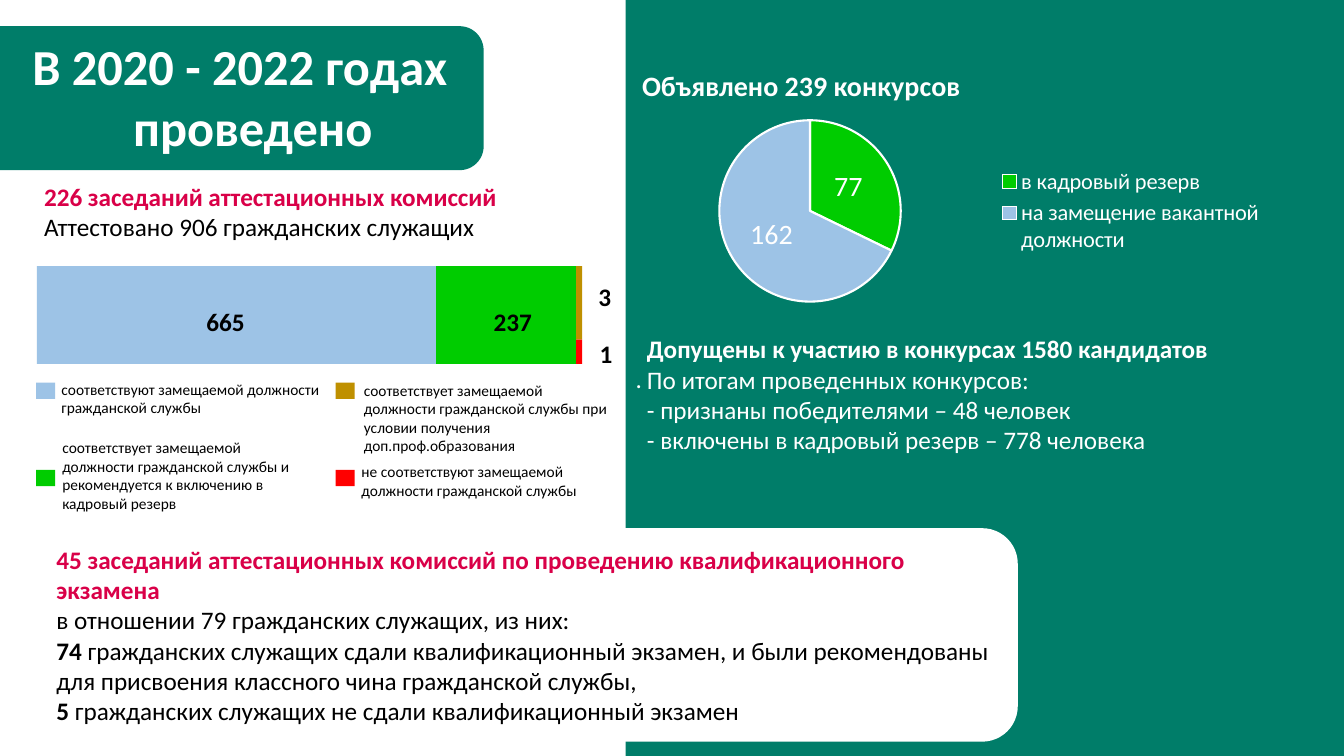
"""Build a slide on attestation and competition results for 2020–2022."""
from lxml.etree import SubElement
from pptx import Presentation
from pptx.chart.data import CategoryChartData
from pptx.dml.color import RGBColor
from pptx.enum.chart import XL_CHART_TYPE, XL_LABEL_POSITION, XL_LEGEND_POSITION
from pptx.enum.shapes import MSO_SHAPE
from pptx.enum.text import MSO_ANCHOR, MSO_AUTO_SIZE, PP_ALIGN
from pptx.oxml.ns import qn
from pptx.util import Cm, Pt

FONT = "Calibri"
COLORS = {
    "teal": "007D69", "white": "FFFFFF", "black": "000000", "crimson": "D90048",
    "green": "00CC00", "blue": "9DC3E6", "amber": "BF9000", "red": "FF0000",
}

TITLE = [[("В 2020 - 2022 годах", True, "white")], [("проведено", True, "white")]]
COMPETITIONS = [[("Объявлено 239 конкурсов", True, "white")]]
ATTESTATION = [
    [("226 заседаний аттестационных комиссий", True, "crimson")],
    [("Аттестовано 906 гражданских служащих", False, "black")],
]
CANDIDATES = [
    [("Допущены к участию в конкурсах 1580 кандидатов", True, "white")],
    [("По итогам проведенных конкурсов:", False, "white")],
    [("- признаны победителями – 48 человек", False, "white")],
    [("- включены в кадровый резерв – 778 человека", False, "white")],
]
EXAM = [
    [("45 заседаний аттестационных комиссий по проведению квалификационного экзамена",
      True, "crimson")],
    [("в отношении 79 гражданских служащих, из них:", False, "black")],
    [("74 ", True, "black"),
     ("гражданских служащих сдали квалификационный экзамен, и были рекомендованы "
      "для присвоения классного чина гражданской службы,", False, "black")],
    [("5 ", True, "black"),
     ("гражданских служащих не сдали квалификационный экзамен", False, "black")],
]
PIE = [("в кадровый резерв", 77, "green"),
       ("на замещение вакантной должности", 162, "blue")]
BAR_LEFT, BAR_TOP, BAR_HEIGHT, AMBER_HEIGHT = 0.93, 6.71, 2.46, 1.85
BAR_WIDTHS = {"blue": 10.06, "green": 3.53, "amber": 0.15}
BAR_LABELS = [("665", 4.95, 7.59), ("237", 12.19, 7.59), ("3", 14.83, 6.96), ("1", 14.86, 8.41)]
KEY_LEFTS, KEY_TOPS = (0.91, 8.46), (9.64, 11.84)
LEGEND = [
    ("blue", 0, 0, "соответствуют замещаемой должности гражданской службы",
     (1.3, 9.45, 8.28, 1.19)),
    ("green", 0, 1, "соответствует замещаемой должности гражданской службы и "
     "рекомендуется к включению в кадровый резерв", (1.32, 10.92, 6.91, 2.13)),
    ("amber", 1, 0, "соответствует замещаемой должности гражданской службы при "
     "условии получения доп.проф.образования", (8.92, 9.47, 6.68, 2.13)),
    ("red", 1, 1, "не соответствуют замещаемой должности гражданской службы",
     (8.86, 11.53, 6.12, 1.96)),
]


def color(name):
    return RGBColor.from_string(COLORS[name])


def place(shape, box):
    shape.left, shape.top, shape.width, shape.height = (Cm(length) for length in box)


def write(shape, paragraphs, size, anchor=MSO_ANCHOR.TOP):
    frame = shape.text_frame
    frame.word_wrap = True
    frame.auto_size = MSO_AUTO_SIZE.NONE
    frame.vertical_anchor = anchor
    for index, runs in enumerate(paragraphs):
        paragraph = frame.add_paragraph() if index else frame.paragraphs[0]
        paragraph.alignment = PP_ALIGN.LEFT
        paragraph.space_before = Pt(0)
        paragraph.font.name = FONT
        paragraph.font.size = Pt(size)
        for text, bold, name in runs:
            run = paragraph.add_run()
            run.text = text
            run.font.bold = bold
            run.font.color.rgb = color(name)


def add_block(slide, box, name, preset=MSO_SHAPE.RECTANGLE):
    shape = slide.shapes.add_shape(preset, *(Cm(length) for length in box))
    shape.shadow.inherit = False
    shape.fill.solid()
    shape.fill.fore_color.rgb = color(name)
    shape.line.fill.background()
    return shape


def add_text(slide, box, paragraphs, size):
    shape = slide.shapes.add_textbox(*(Cm(length) for length in box))
    write(shape, paragraphs, size)


def fill_placeholder(shape, box, paragraphs, size):
    place(shape, box)
    write(shape, paragraphs, size)
    shape.element.getparent().append(shape.element)


def set_indent(paragraph, margin):
    properties = paragraph._p.get_or_add_pPr()
    properties.set("marL", str(Cm(margin)))
    properties.set("indent", "0")
    SubElement(properties, qn("a:buNone"))


def set_layout(parent, position, tag, inner=False):
    for old in parent.findall(qn("c:layout")):
        parent.remove(old)
    layout = SubElement(parent, qn("c:layout"))
    manual = SubElement(layout, qn("c:manualLayout"))
    if inner:
        SubElement(manual, qn("c:layoutTarget")).set("val", "inner")
    for mode in ("xMode", "yMode"):
        SubElement(manual, qn(f"c:{mode}")).set("val", "edge")
    for key, value in zip("xywh", position):
        SubElement(manual, qn(f"c:{key}")).set("val", str(value))
    parent.remove(layout)
    previous = parent.find(qn(tag)) if tag else None
    parent.insert(0 if previous is None else parent.index(previous) + 1, layout)


def add_pie(slide):
    data = CategoryChartData()
    data.categories = [category for category, _, _ in PIE]
    data.add_series("Конкурсы", [value for _, value, _ in PIE])
    box = (Cm(15.14), Cm(2.69), Cm(17.58), Cm(5.36))
    chart = slide.shapes.add_chart(XL_CHART_TYPE.PIE, *box, data).chart
    chart.has_title = False
    chart.font.name = FONT
    chart.font.size = Pt(16)
    chart.font.color.rgb = color("white")
    chart.has_legend = True
    chart.legend.position = XL_LEGEND_POSITION.RIGHT
    chart.legend.include_in_layout = False
    chart.legend.font.name = FONT
    chart.legend.font.size = Pt(16)
    chart.legend.font.color.rgb = color("white")
    plot = chart.plots[0]
    plot.vary_by_categories = True
    for index, (_, _, name) in enumerate(PIE):
        slice_format = plot.series[0].points[index].format
        slice_format.fill.solid()
        slice_format.fill.fore_color.rgb = color(name)
        slice_format.line.color.rgb = color("white")
        slice_format.line.width = Pt(1.5)
    plot.has_data_labels = True
    labels = plot.data_labels
    labels.show_value = True
    labels.show_percentage = False
    labels.position = XL_LABEL_POSITION.CENTER
    labels.font.name = FONT
    labels.font.size = Pt(20)
    labels.font.bold = False
    labels.font.color.rgb = color("white")
    plot_area = chart.element.find(".//" + qn("c:plotArea"))
    set_layout(plot_area, (0.17, 0.06, 0.26, 0.86), None, inner=True)
    legend = chart.element.find(".//" + qn("c:legend"))
    set_layout(legend, (0.55, 0.27, 0.42, 0.44), "c:legendPos")


def add_stacked_bar(slide):
    left = BAR_LEFT
    for name, width in BAR_WIDTHS.items():
        height = AMBER_HEIGHT if name == "amber" else BAR_HEIGHT
        add_block(slide, (left, BAR_TOP, width, height), name)
        if name == "amber":
            add_block(slide, (left, BAR_TOP + height, width, BAR_HEIGHT - height), "red")
        left += width
    for text, label_left, top in BAR_LABELS:
        add_text(slide, (label_left, top, 2.2, 1.02), [[(text, True, "black")]], 18)
    for name, column, row, text, box in LEGEND:
        add_block(slide, (KEY_LEFTS[column], KEY_TOPS[row], 0.48, 0.41), name)
        add_text(slide, box, [[(text, False, "black")]], 11)


def main():
    presentation = Presentation()
    presentation.slide_width, presentation.slide_height = Cm(33.87), Cm(19.05)
    slide = presentation.slides.add_slide(presentation.slide_layouts[1])
    title, body = slide.placeholders
    add_block(slide, (-0.76, 0.66, 12.95, 3.63), "teal", MSO_SHAPE.ROUNDED_RECTANGLE)
    panel = add_block(slide, (15.77, 0, 18.1, 19.05), "teal")
    write(panel, [[(".", False, "white")]], 18, MSO_ANCHOR.MIDDLE)
    add_text(slide, (15.93, 1.6, 17.9, 1.2), COMPETITIONS, 20)
    add_pie(slide)
    add_text(slide, (0.86, 4.45, 14.8, 1.8), ATTESTATION, 18)
    add_stacked_bar(slide)
    card = add_block(slide, (0.91, 13.31, 24.74, 5.38), "white", MSO_SHAPE.ROUNDED_RECTANGLE)
    write(card, EXAM, 18, MSO_ANCHOR.MIDDLE)
    fill_placeholder(title, (0.56, 0.76, 11.71, 3.5), TITLE, 36)
    set_indent(title.text_frame.paragraphs[1], 2.54)
    fill_placeholder(body, (16.05, 8.28, 16.94, 3.33), CANDIDATES, 18)
    for paragraph in body.text_frame.paragraphs:
        set_indent(paragraph, 0)
    presentation.save("out.pptx")


if __name__ == "__main__":
    main()
